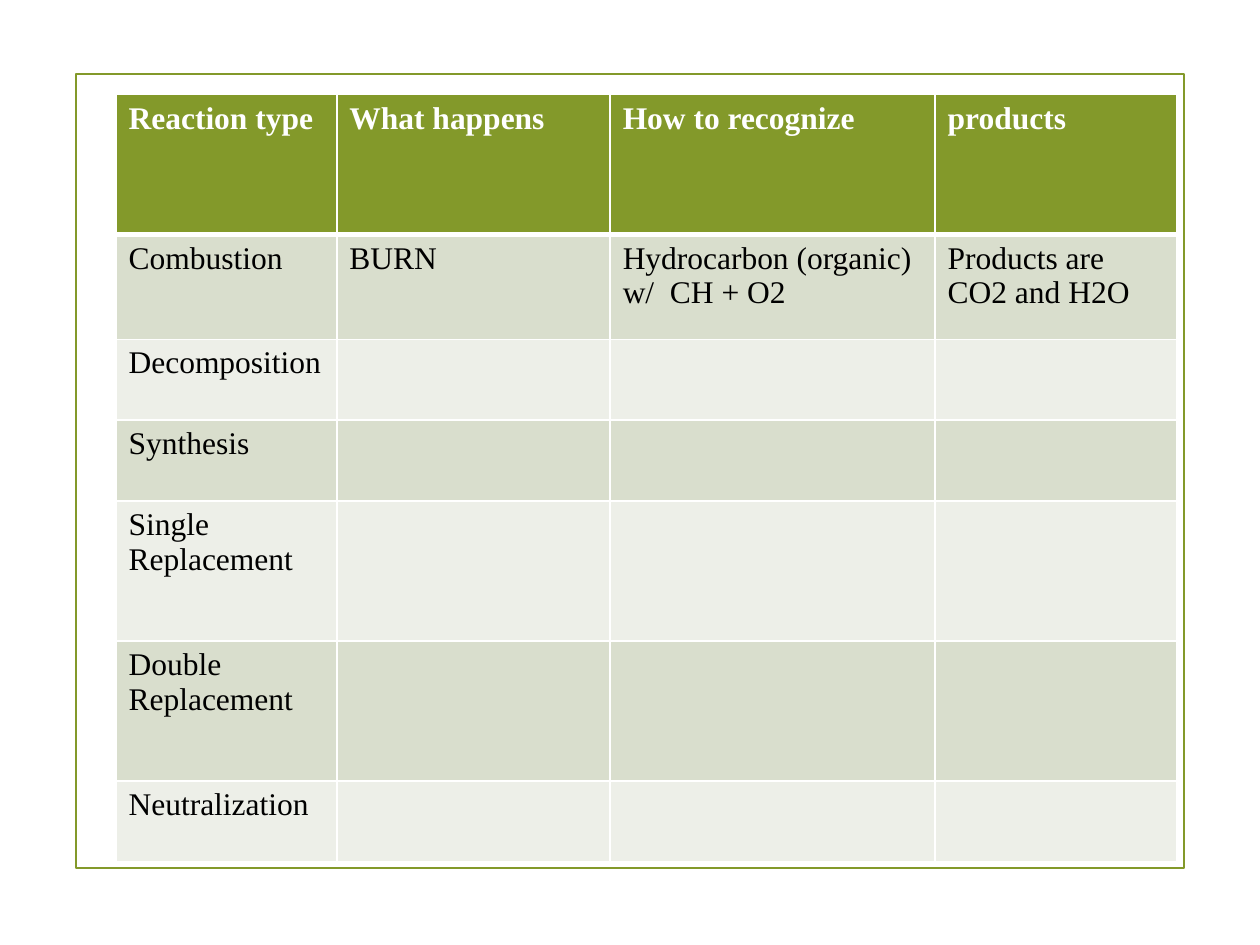
from lxml.etree import SubElement
from pptx import Presentation
from pptx.dml.color import RGBColor
from pptx.enum.shapes import MSO_SHAPE
from pptx.oxml.ns import qn
from pptx.util import Cm, Pt

theme = {
    "font": "Times New Roman",
    "size": Pt(18),
    "green": RGBColor.from_string("83992A"),
    "dark_band": RGBColor.from_string("D9DECD"),
    "light_band": RGBColor.from_string("EDEFE8"),
    "white": RGBColor.from_string("FFFFFF"),
    "black": RGBColor.from_string("000000"),
}

column_widths = [4.45, 5.51, 6.55, 4.88]
row_heights = [2.82, 2.11, 1.63, 1.63, 2.82, 2.82, 1.63]
reactions = [
    ["Reaction type", "What happens", "How to recognize", "products"],
    ["Combustion", "BURN", "Hydrocarbon (organic) w/  CH + O2", "Products are CO2 and H2O"],
    ["Decomposition"],
    ["Synthesis"],
    ["Single Replacement"],
    ["Double Replacement"],
    ["Neutralization"],
]


def add_borders(cell, bottom_width):
    """Draw white rules on the four sides of a cell."""
    properties = cell._tc.get_or_add_tcPr()
    for side, width in (("L", 1), ("R", 1), ("T", 1), ("B", bottom_width)):
        line = SubElement(properties, qn(f"a:ln{side}"), w=str(Pt(width)))
        fill = SubElement(line, qn("a:solidFill"))
        SubElement(fill, qn("a:srgbClr"), val=str(theme["white"]))


deck = Presentation()
deck.slide_width, deck.slide_height = Cm(25.4), Cm(19.05)
page = deck.slides.add_slide(deck.slide_layouts[6])

# Frame around the page
frame = page.shapes.add_shape(MSO_SHAPE.RECTANGLE, Cm(1.54), Cm(1.5), Cm(22.33), Cm(16))
frame.shadow.inherit = False
frame.fill.background()
frame.line.color.rgb = theme["green"]
frame.line.width = Pt(1.25)

# Reaction table
table = page.shapes.add_table(
    len(row_heights), len(column_widths), Cm(2.34), Cm(1.91),
    Cm(sum(column_widths)), Cm(sum(row_heights)),
).table
for column, width in zip(table.columns, column_widths):
    column.width = Cm(width)
for row, height in zip(table.rows, row_heights):
    row.height = Cm(height)

# Cells: green header, then alternating bands
for row_number, (row, texts) in enumerate(zip(table.rows, reactions)):
    header = row_number == 0
    band = "green" if header else "dark_band" if row_number % 2 else "light_band"
    text_format = {"name": theme["font"], "size": theme["size"], "bold": header}
    for column_number, cell in enumerate(row.cells):
        add_borders(cell, 3 if header else 1)
        cell.fill.solid()
        cell.fill.fore_color.rgb = theme[band]
        if column_number < len(texts):
            span = cell.text_frame.paragraphs[0].add_run()
            span.text = texts[column_number]
            for name, value in text_format.items():
                setattr(span.font, name, value)
            span.font.color.rgb = theme["white" if header else "black"]

deck.save("out.pptx")
